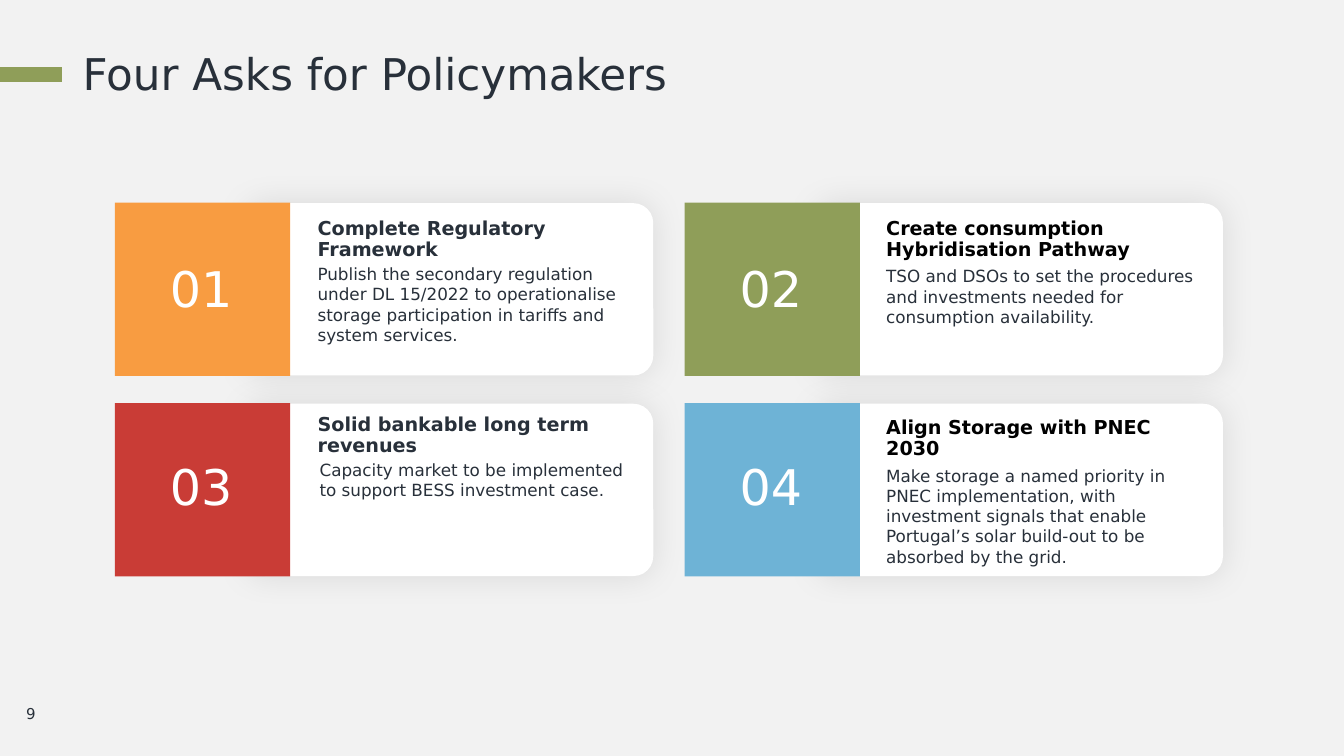
from dataclasses import dataclass

from lxml.etree import SubElement
from pptx import Presentation
from pptx.dml.color import RGBColor
from pptx.enum.shapes import MSO_CONNECTOR as Connector, MSO_SHAPE as Preset
from pptx.enum.text import MSO_ANCHOR as Anchor, PP_ALIGN as Align
from pptx.oxml.ns import qn
from pptx.util import Inches, Pt

FONT = "DejaVu Sans"
INK, BLACK, WHITE, PAPER = "28303A", "000000", "FFFFFF", "F2F2F2"
GREEN = "8F9E59"

# Lengths are percentages of the slide's width and height
BLOCK_LEFT, BLOCK_TOP, BLOCK_WIDTH, BLOCK_HEIGHT = 8.55, 26.8, 13.05, 22.93
COLUMN_PITCH, ROW_PITCH = 42.39, 26.53
CARD_INDENT, CARD_WIDTH, CARD_HEIGHT = 9.75, 30.31, 22.8
NUMBER_LEFT, NUMBER_TOP, NUMBER_WIDTH, NUMBER_HEIGHT = 11.7, 32.8, 6.53, 11.6
NUMBER_ROW_PITCH = 26.13
HEADING_WIDTH, HEADING_HEIGHT = 23.4, 6.0
DETAIL_WIDTH, DETAIL_HEIGHT = 23.93, 9.73


@dataclass(frozen=True)
class Box:
    left: float
    top: float
    width: float
    height: float


@dataclass(frozen=True)
class Style:
    size: float
    color: str = INK
    bold: bool = False
    line_spacing: float = 1.0
    align: Align = Align.LEFT
    anchor: Anchor = Anchor.TOP
    inset_x: float = 0
    inset_y: float = 0


@dataclass(frozen=True)
class Ask:
    number: str
    column: int
    row: int
    color: str
    heading: str
    heading_color: str
    heading_top: float
    detail: str
    detail_left: float
    detail_top: float


ASKS = [
    Ask("01", 0, 0, "F89C41", "Complete Regulatory Framework", INK, 28.93,
        "Publish the secondary regulation under DL 15/2022 to operationalise "
        "storage participation in tariffs and system services.", 23.63, 34.93),
    Ask("03", 0, 1, "C93C36", "Solid bankable long term revenues", INK, 54.93,
        "Capacity market to be implemented to support BESS investment case.",
        23.78, 60.8),
    Ask("02", 1, 0, GREEN, "Create consumption Hybridisation Pathway", BLACK, 28.93,
        "TSO and DSOs to set the procedures and investments needed for "
        "consumption availability.", 65.94, 35.2),
    Ask("04", 1, 1, "6EB3D6", "Align Storage with PNEC 2030", BLACK, 55.33,
        "Make storage a named priority in PNEC implementation, with investment "
        "signals that enable Portugal’s solar build-out to be absorbed by the grid.",
        65.94, 61.6),
]

deck = Presentation()
deck.slide_width, deck.slide_height = Inches(13.33), Inches(7.5)
slide = deck.slides.add_slide(deck.slide_layouts[6])


def rgb(color: str) -> RGBColor:
    return RGBColor.from_string(color)


def across(share: float) -> int:
    return round(deck.slide_width * share / 100)


def down(share: float) -> int:
    return round(deck.slide_height * share / 100)


def place(box: Box) -> tuple[int, int, int, int]:
    return across(box.left), down(box.top), across(box.width), down(box.height)


def add_text(box: Box, wording: str, style: Style) -> None:
    frame = slide.shapes.add_textbox(*place(box)).text_frame
    frame.word_wrap = True
    frame.vertical_anchor = style.anchor
    frame.margin_left = frame.margin_right = Inches(style.inset_x)
    frame.margin_top = frame.margin_bottom = Inches(style.inset_y)
    paragraph = frame.paragraphs[0]
    paragraph.alignment = style.align
    paragraph.line_spacing = style.line_spacing
    run = paragraph.add_run()
    run.text = wording
    run.font.name, run.font.size, run.font.bold = FONT, Pt(style.size), style.bold
    run.font.color.rgb = rgb(style.color)


def add_panel(preset: Preset, box: Box, color: str):
    panel = slide.shapes.add_shape(preset, *place(box))
    panel.shadow.inherit = False
    panel.fill.solid()
    panel.fill.fore_color.rgb = rgb(color)
    panel.line.fill.background()
    return panel


def add_card(box: Box) -> None:
    card = add_panel(Preset.ROUNDED_RECTANGLE, box, WHITE)
    card.adjustments[0] = 0.115
    # Soft glow-like shadow on every side
    effects = card.element.spPr.find(qn("a:effectLst"))
    shadow = SubElement(effects, qn("a:outerShdw"), blurRad=str(Pt(23.9)),
                        dist="0", dir="0", algn="ctr", rotWithShape="0")
    tint = SubElement(shadow, qn("a:srgbClr"), val=BLACK)
    SubElement(tint, qn("a:alpha"), val="9000")


def add_ask(ask: Ask) -> None:
    shift = ask.column * COLUMN_PITCH
    left, top = BLOCK_LEFT + shift, BLOCK_TOP + ask.row * ROW_PITCH
    add_card(Box(left + CARD_INDENT, top + 0.07, CARD_WIDTH, CARD_HEIGHT))
    add_panel(Preset.RECTANGLE, Box(left, top, BLOCK_WIDTH, BLOCK_HEIGHT), ask.color)
    add_text(Box(NUMBER_LEFT + shift, NUMBER_TOP + ask.row * NUMBER_ROW_PITCH,
                 NUMBER_WIDTH, NUMBER_HEIGHT), ask.number, NUMBER)
    heading = Style(13.7, ask.heading_color, bold=True, line_spacing=0.9)
    add_text(Box(23.63 + ask.column * 42.31, ask.heading_top,
                 HEADING_WIDTH, HEADING_HEIGHT), ask.heading, heading)
    add_text(Box(ask.detail_left, ask.detail_top, DETAIL_WIDTH, DETAIL_HEIGHT),
             ask.detail, Style(12))


NUMBER = Style(35.1, WHITE, line_spacing=0.9, align=Align.CENTER,
               anchor=Anchor.MIDDLE, inset_x=0.04, inset_y=0.04)

# Background, title and page number
slide.background.fill.solid()
slide.background.fill.fore_color.rgb = rgb(PAPER)
add_text(Box(6.15, 6.13, 87.85, 7.2), "Four Asks for Policymakers", Style(31.2))
add_text(Box(1.2, 91.73, 5.1, 5.33), "9",
         Style(10.7, anchor=Anchor.MIDDLE, inset_x=0.1, inset_y=0.05))

# Accent bar beside the title
accent = slide.shapes.add_connector(
    Connector.STRAIGHT, across(4.58), down(9.87), 0, down(9.87))
accent.line.color.rgb = rgb(GREEN)
accent.line.width = Pt(10.25)
SubElement(accent.element.spPr, qn("a:effectLst"))

# The four asks, column by column
for ask in ASKS:
    add_ask(ask)

deck.save("out.pptx")
